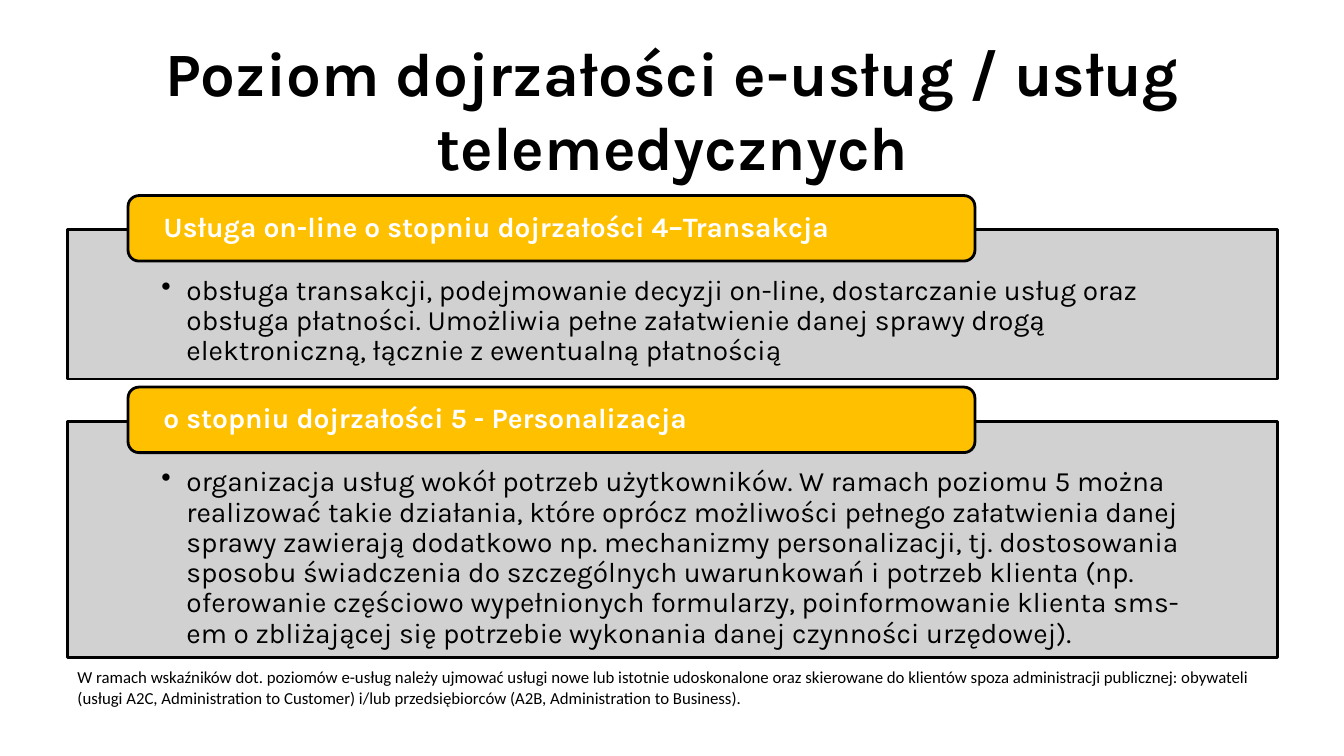
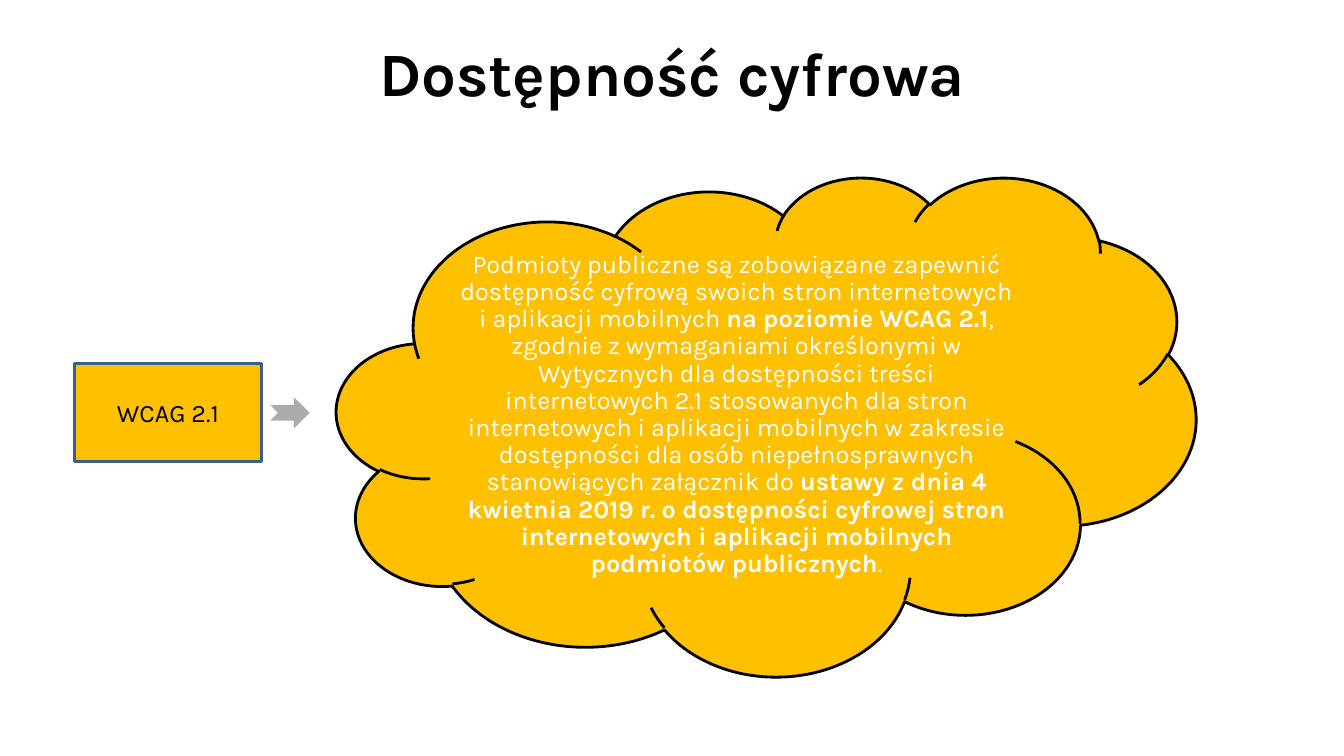
import pptx
import pptx.util
import pptx.dml.color
import pptx.enum.shapes
import pptx.enum.text
import pptx.oxml
import pptx.oxml.ns

RGBColor = pptx.dml.color.RGBColor
SHAPES = pptx.enum.shapes.MSO_SHAPE
ALIGN = pptx.enum.text.PP_ALIGN
ANCHOR = pptx.enum.text.MSO_ANCHOR
NAMESPACE = pptx.oxml.ns.nsdecls("a")

# Shared look; lengths are px, 100 px to the inch
PX = 9144
BLACK = RGBColor(0x00, 0x00, 0x00)
WHITE = RGBColor(0xFF, 0xFF, 0xFF)
AMBER = RGBColor(0xFF, 0xC0, 0x00)
PANEL_GREY = RGBColor(0xCC, 0xCC, 0xCC)
ARROW_GREY = RGBColor(0xAB, 0xAB, 0xAB)
BOX_BLUE = RGBColor(0x3A, 0x5F, 0x8C)
MARGIN, CONTENT_WIDTH = 67, 1200
DEFAULT_INSETS = (10, 5, 10, 5)

TITLE_FONT = {"name": "Karla", "size": 44, "bold": True, "color": BLACK}
LABEL_FONT = {"name": "Karla", "size": 20, "bold": True, "color": WHITE}
BODY_FONT = {"name": "Karla", "size": 20, "bold": False, "color": BLACK}
NOTE_FONT = {"name": "Calibri", "size": 12, "bold": False, "color": BLACK}
CLOUD_FONT = {"name": "Karla", "size": 18, "bold": False, "color": WHITE}
BOX_FONT = {"name": "Karla", "size": 18, "bold": False, "color": BLACK}

# Content
LEVELS_TITLE = "Poziom dojrzałości e-usług / usług telemedycznych"
LEVELS = [  # label, description, panel top, panel height
    ("Usługa on-line o stopniu dojrzałości 4–Transakcja",
     "obsługa transakcji, podejmowanie decyzji on-line, dostarczanie usług oraz "
     "obsługa płatności. Umożliwia pełne załatwienie danej sprawy drogą "
     "elektroniczną, łącznie z ewentualną płatnością", 228, 148),
    ("o stopniu dojrzałości 5 - Personalizacja",
     "organizacja usług wokół potrzeb użytkowników. W ramach poziomu 5 można "
     "realizować takie działania, które oprócz możliwości pełnego załatwienia "
     "danej sprawy zawierają dodatkowo np. mechanizmy personalizacji, tj. "
     "dostosowania sposobu świadczenia do szczególnych uwarunkowań i potrzeb "
     "klienta (np. oferowanie częściowo wypełnionych formularzy, poinformowanie "
     "klienta sms-em o zbliżającej się potrzebie wykonania danej czynności "
     "urzędowej).", 418, 234),
]
LEVELS_NOTE = (
    "W ramach wskaźników dot. poziomów e-usług należy ujmować usługi nowe lub "
    "istotnie udoskonalone oraz skierowane do klientów spoza administracji "
    "publicznej: obywateli (usługi A2C, Administration to Customer) i/lub "
    "przedsiębiorców (A2B, Administration to Business).")

ACCESS_TITLE = "Dostępność cyfrowa"
STANDARD = "WCAG 2.1"
REQUIREMENT = [  # text, bold
    ("Podmioty publiczne są zobowiązane zapewnić dostępność cyfrową swoich stron "
     "internetowych i aplikacji mobilnych ", False),
    ("na poziomie WCAG 2.1", True),
    (", zgodnie z wymaganiami określonymi w Wytycznych dla dostępności treści "
     "internetowych 2.1 stosowanych dla stron internetowych i aplikacji mobilnych "
     "w zakresie dostępności dla osób niepełnosprawnych stanowiących załącznik do ",
     False),
    ("ustawy z dnia 4 kwietnia 2019 r. o dostępności cyfrowej stron internetowych "
     "i aplikacji mobilnych podmiotów publicznych", True),
    (".", False),
]


def set_font(font, style):
    for name, value in style.items():
        if name == "color":
            font.color.rgb = value
        else:
            setattr(font, name, pptx.util.Pt(value) if name == "size" else value)


def write(shape, runs, style, align=ALIGN.LEFT, anchor=ANCHOR.TOP,
          insets=DEFAULT_INSETS, spacing=None, bullet=False):
    """Fill a shape with one paragraph of (text, bold) runs or plain text."""
    frame = shape.text_frame
    settings = {"word_wrap": True, "vertical_anchor": anchor,
                "auto_size": pptx.enum.text.MSO_AUTO_SIZE.NONE}
    sides = ("margin_left", "margin_top", "margin_right", "margin_bottom")
    settings.update(zip(sides, (inset * PX for inset in insets)))
    for name, value in settings.items():
        setattr(frame, name, value)
    paragraph = frame.paragraphs[0]
    paragraph.alignment = align
    if spacing:
        paragraph.line_spacing = spacing
    if bullet:
        properties = paragraph._p.get_or_add_pPr()
        properties.set("marL", str(25 * PX))
        properties.set("indent", str(-25 * PX))
        properties.append(pptx.oxml.parse_xml(f'<a:buChar {NAMESPACE} char="•"/>'))
    if isinstance(runs, str):
        runs = [(runs, style["bold"])]
    for text, bold in runs:
        run = paragraph.add_run()
        run.text = text
        set_font(run.font, {**style, "bold": bold})


def add_shape(slide, kind, box, fill, line=None, opacity=None):
    shape = slide.shapes.add_shape(kind, *(length * PX for length in box))
    shape.shadow.inherit = False
    shape.fill.solid()
    shape.fill.fore_color.rgb = fill
    if opacity:
        color = shape.fill._xPr.find(".//" + pptx.oxml.ns.qn("a:srgbClr"))
        color.append(pptx.oxml.parse_xml(
            f'<a:alpha {NAMESPACE} val="{opacity * 1000}"/>'))
    if line is None:
        shape.line.fill.background()
    else:
        shape.line.color.rgb = line
        shape.line.width = pptx.util.Pt(2)
    return shape


def add_text(slide, box, runs, style, **options):
    textbox = slide.shapes.add_textbox(*(length * PX for length in box))
    write(textbox, runs, style, **options)


def add_slide(presentation, title):
    slide = presentation.slides.add_slide(presentation.slide_layouts[5])
    placeholder = slide.shapes.title
    box = zip(("left", "top", "width", "height"), (MARGIN, 30, CONTENT_WIDTH, 125))
    for name, value in box:
        setattr(placeholder, name, value * PX)
    write(placeholder, title, TITLE_FONT, align=ALIGN.CENTER)
    return slide


def build_levels(presentation):
    slide = add_slide(presentation, LEVELS_TITLE)
    for label, description, top, height in LEVELS:
        # Grey panel with a label tab over its top edge
        panel = add_shape(slide, SHAPES.RECTANGLE,
                          (MARGIN, top, CONTENT_WIDTH, height),
                          PANEL_GREY, BLACK, opacity=90)
        write(panel, description, BODY_FONT, insets=(93, 46, 93, 16),
              spacing=0.9, bullet=True)
        tab = add_shape(slide, SHAPES.ROUNDED_RECTANGLE,
                        (MARGIN + 60, top - 34, 840, 65), AMBER, BLACK)
        write(tab, label, LABEL_FONT, anchor=ANCHOR.MIDDLE,
              insets=(32, 0, 32, 0), spacing=0.9)
    add_text(slide, (MARGIN, 657, CONTENT_WIDTH, 50), LEVELS_NOTE, NOTE_FONT)


def build_access(presentation):
    slide = add_slide(presentation, ACCESS_TITLE)
    # Cloud with the legal requirement
    add_shape(slide, SHAPES.CLOUD, (334, 175, 852, 495), AMBER, BLACK)
    add_text(slide, (452, 250, 557, 323), REQUIREMENT, CLOUD_FONT,
             align=ALIGN.CENTER, anchor=ANCHOR.MIDDLE,
             insets=(3, 3, 3, 3), spacing=0.9)
    # Standard and the arrow leading to the cloud
    add_shape(slide, SHAPES.NOTCHED_RIGHT_ARROW, (268, 394, 39, 31), ARROW_GREY)
    standard = add_shape(slide, SHAPES.RECTANGLE, (74, 361, 185, 97),
                         AMBER, BOX_BLUE)
    write(standard, STANDARD, BOX_FONT, align=ALIGN.CENTER, anchor=ANCHOR.MIDDLE)


def main():
    presentation = pptx.Presentation()
    presentation.slide_width = 1333 * PX
    presentation.slide_height = 750 * PX
    build_levels(presentation)
    build_access(presentation)
    presentation.save("out.pptx")


if __name__ == "__main__":
    main()
